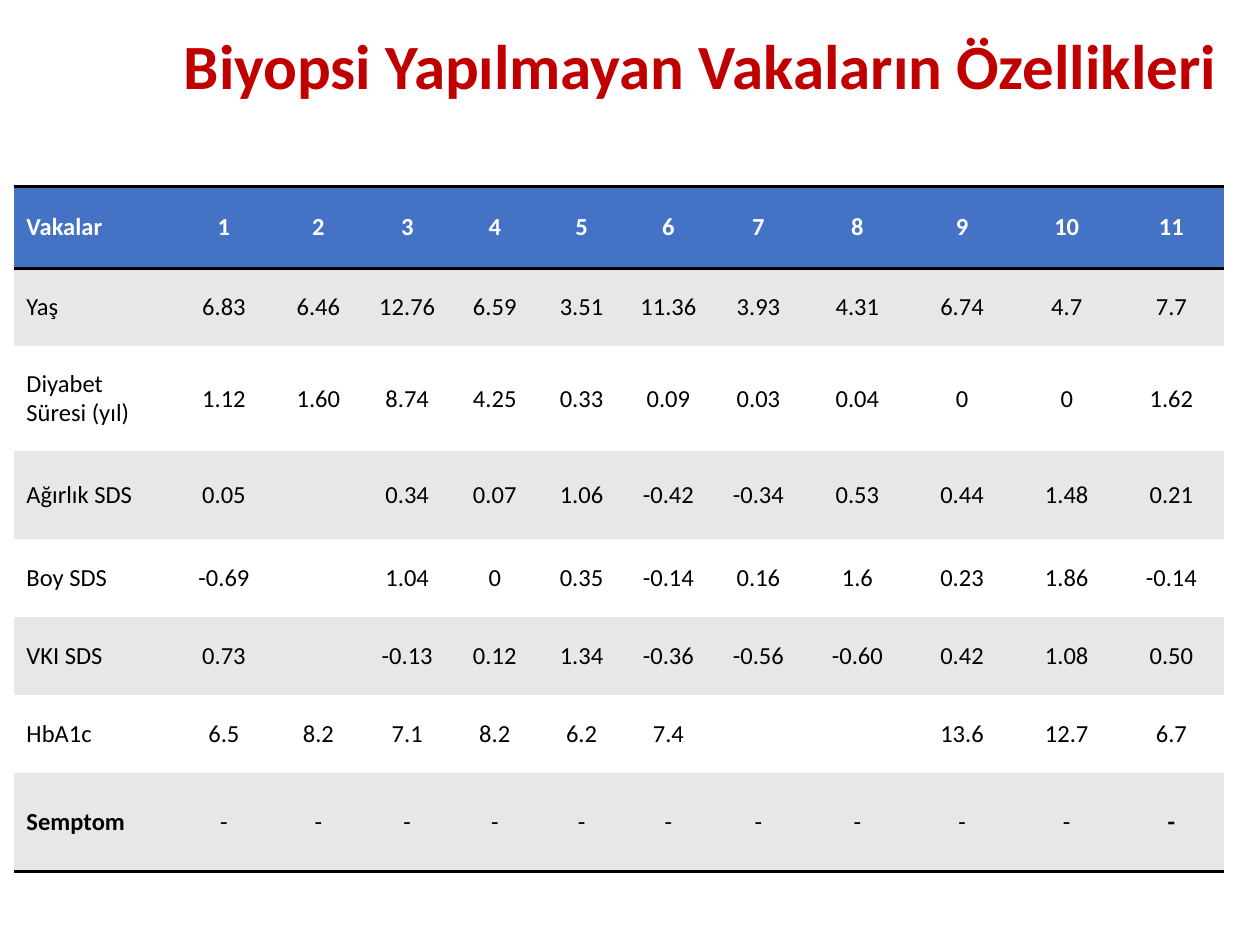
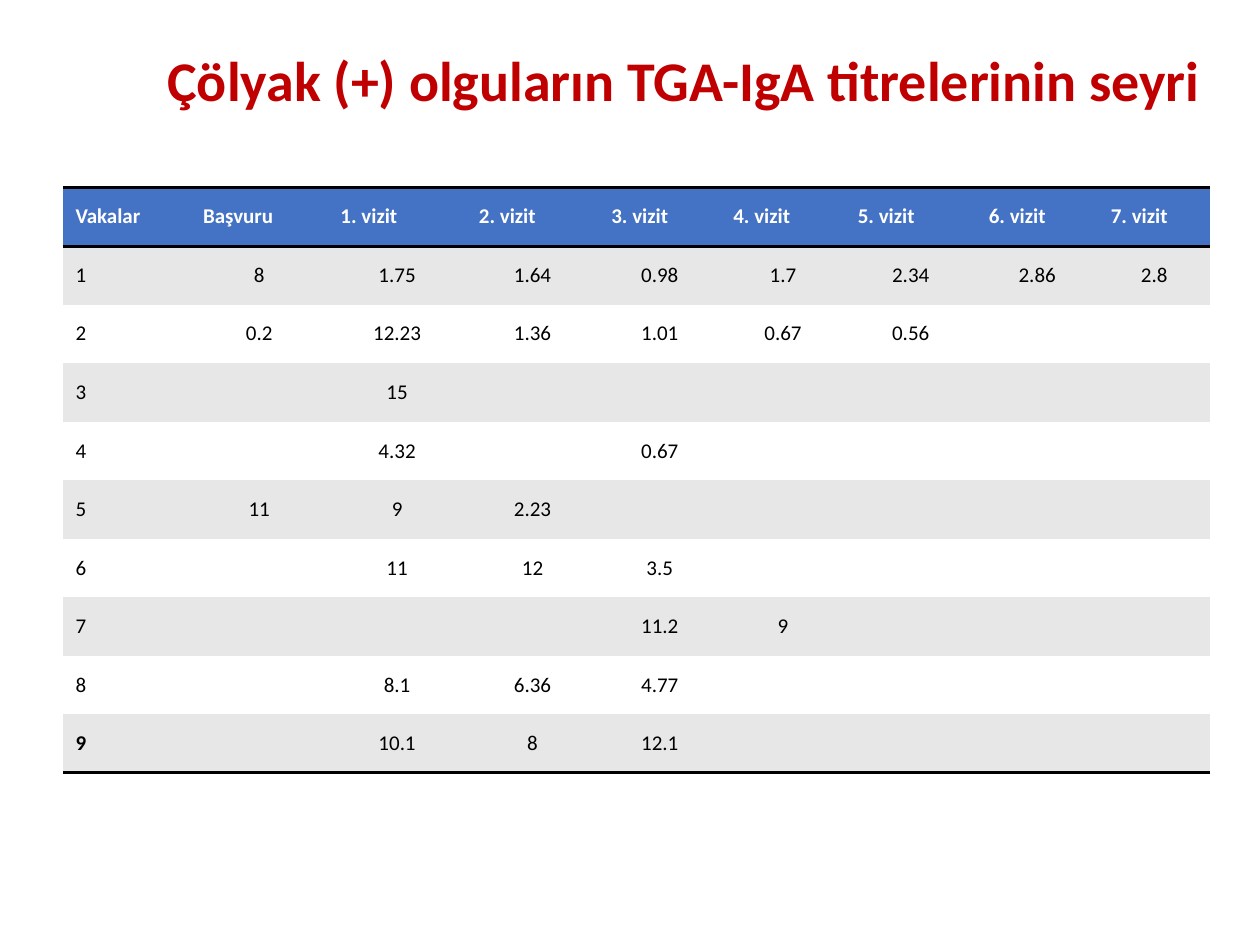
from lxml import etree
from pptx import Presentation
from pptx.dml.color import RGBColor
from pptx.enum.text import MSO_ANCHOR, MSO_AUTO_SIZE, PP_ALIGN
from pptx.oxml.ns import qn
from pptx.util import Cm, Pt

RED = RGBColor(0xC0, 0x00, 0x00)
BLUE = RGBColor(0x44, 0x72, 0xC4)
GREY = RGBColor(0xE7, 0xE7, 0xE7)
WHITE = RGBColor(0xFF, 0xFF, 0xFF)
BLACK = RGBColor(0x00, 0x00, 0x00)
FONT = "Calibri"
PLAIN = "{2D5ABB26-0587-4C30-8999-92F81FD0307C}"  # table style without grid

# Cells are split at "|"; an empty piece is an empty cell
CASES = [
    "Vakalar|1|2|3|4|5|6|7|8|9|10|11",
    "Yaş|6.83|6.46|12.76|6.59|3.51|11.36|3.93|4.31|6.74|4.7|7.7",
    "Diyabet Süresi (yıl)|1.12|1.60|8.74|4.25|0.33|0.09|0.03|0.04|0|0|1.62",
    "Ağırlık SDS|0.05||0.34|0.07|1.06|-0.42|-0.34|0.53|0.44|1.48|0.21",
    "Boy SDS|-0.69||1.04|0|0.35|-0.14|0.16|1.6|0.23|1.86|-0.14",
    "VKI SDS|0.73||-0.13|0.12|1.34|-0.36|-0.56|-0.60|0.42|1.08|0.50",
    "HbA1c|6.5|8.2|7.1|8.2|6.2|7.4|||13.6|12.7|6.7",
    "Semptom|-|-|-|-|-|-|-|-|-|-|-",
]
VISITS = [
    "Vakalar|Başvuru|1. vizit|2. vizit|3. vizit|4. vizit|5. vizit|6. vizit|7. vizit",
    "1|8|1.75|1.64|0.98|1.7|2.34|2.86|2.8",
    "2|0.2|12.23|1.36|1.01|0.67|0.56||",
    "3||15||||||",
    "4||4.32||0.67||||",
    "5|11|9|2.23|||||",
    "6||11|12|3.5||||",
    "7||||11.2|9|||",
    "8||8.1|6.36|4.77||||",
    "9||10.1|8|12.1||||",
]

SLIDES = [
    dict(title="Biyopsi Yapılmayan Vakaların Özellikleri", size=36, spot=(3.45, 0.53),
         rows=CASES, text=14, at=(0.28, 3.76), head=PP_ALIGN.CENTER,
         wide=[3.23, 2.01, 1.8, 1.78] + [1.75] * 3 + [1.88] + [2.11] * 4,
         high=[1.65, 1.57, 2.11, 1.78] + [1.57] * 3 + [1.98],
         bold=[(7, 0), (7, 11)]),
    dict(title="Çölyak (+) olguların TGA-IgA titrelerinin seyri", size=32, spot=(3.12, 0.81),
         rows=VISITS, text=12, at=(1.27, 3.78), head=PP_ALIGN.LEFT,
         wide=[2.57, 2.77, 2.79, 2.67, 2.46, 2.51, 2.64, 2.46, 2.26],
         high=[1.18] * 10,
         bold=[(9, 0)]),
]


def write(frame, text, size=14, color=BLACK, bold=False, align=PP_ALIGN.LEFT, space=1.0):
    par = frame.paragraphs[0]
    par.alignment = align
    par.line_spacing = space
    run = par.add_run()
    run.text = text
    font = run.font
    font.name, font.size, font.bold = FONT, Pt(size), bold
    font.color.rgb = color


def rule(cell, side):
    line = etree.SubElement(cell._tc.get_or_add_tcPr(), qn("a:" + side), w=str(Pt(2)))
    fill = etree.SubElement(line, qn("a:solidFill"))
    etree.SubElement(fill, qn("a:srgbClr"), val=str(BLACK))


deck = Presentation()
deck.slide_width, deck.slide_height = Cm(25.4), Cm(19.05)

for item in SLIDES:
    slide = deck.slides.add_slide(deck.slide_layouts[5])

    # Title
    title = slide.shapes.title
    title.left, title.top = [Cm(v) for v in item["spot"]]
    title.width, title.height = Cm(21.64), Cm(1.73)
    frame = title.text_frame
    frame.auto_size = MSO_AUTO_SIZE.NONE
    frame.vertical_anchor = MSO_ANCHOR.MIDDLE
    write(frame, item["title"], size=item["size"], color=RED, bold=True, space=0.9)

    # Table grid
    rows, wide, high = item["rows"], item["wide"], item["high"]
    left, top = item["at"]
    table = slide.shapes.add_table(len(rows), len(wide), Cm(left), Cm(top),
                                   Cm(sum(wide)), Cm(sum(high))).table
    table._tbl.tblPr.find(qn("a:tableStyleId")).text = PLAIN
    for col, width in zip(table.columns, wide):
        col.width = Cm(width)
    for row, height in zip(table.rows, high):
        row.height = Cm(height)

    # Cells: blue head, then grey and white bands
    last = len(rows) - 1
    for r, row in enumerate(rows):
        for c, text in enumerate(row.split("|")):
            cell = table.cell(r, c)
            cell.vertical_anchor = MSO_ANCHOR.MIDDLE
            if r == 0:
                rule(cell, "lnT")
            if r in (0, last):
                rule(cell, "lnB")
            cell.fill.solid()
            cell.fill.fore_color.rgb = BLUE if r == 0 else GREY if r % 2 else WHITE
            if text:
                align = PP_ALIGN.LEFT if c == 0 else item["head"] if r == 0 else PP_ALIGN.CENTER
                write(cell.text_frame, text, size=item["text"], align=align,
                      color=WHITE if r == 0 else BLACK,
                      bold=r == 0 or (r, c) in item["bold"])

deck.save("out.pptx")
